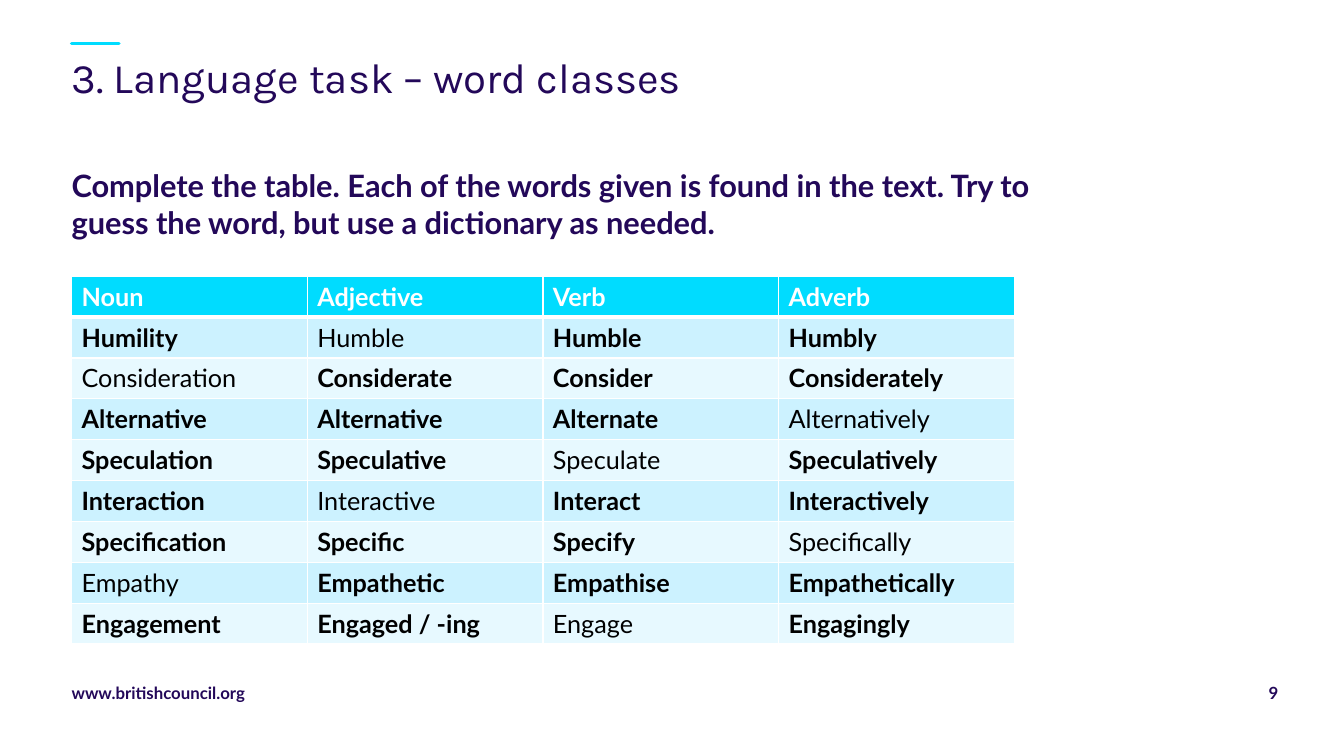
from lxml.etree import SubElement
from pptx import Presentation
from pptx.dml.color import RGBColor
from pptx.enum.shapes import MSO_CONNECTOR
from pptx.enum.text import MSO_ANCHOR, PP_ALIGN
from pptx.oxml import parse_xml
from pptx.oxml.ns import nsdecls, qn
from pptx.util import Inches, Pt

HUES = {"ink": "230859", "cyan": "00DCFF", "white": "FFFFFF",
        "black": "000000", "band": "CCF2FF", "pale": "E7F9FF"}
LEFT, RIGHT = 0.71, 12.68
FOOT = 6.77


def style(para, size, hue, bold=False, face="Lato"):
    font = para.font
    font.name, font.size, font.bold = face, Pt(size), bold
    font.color.rgb = RGBColor.from_string(HUES[hue])


def write(text, left, top, width, height, size, bold=True, face="Lato",
          anchor=MSO_ANCHOR.TOP):
    box = slide.shapes.add_textbox(*map(Inches, (left, top, width, height)))
    frame = box.text_frame
    frame.word_wrap = True
    frame.vertical_anchor = anchor
    frame.margin_left = frame.margin_right = 0
    frame.margin_top = frame.margin_bottom = 0
    para = frame.paragraphs[0]
    para.text = text
    style(para, size, "ink", bold, face)
    return para


deck = Presentation()
deck.slide_width, deck.slide_height = Inches(13.33), Inches(7.5)
slide = deck.slides.add_slide(deck.slide_layouts[6])

# Accent line above the title
rule = slide.shapes.add_connector(
    MSO_CONNECTOR.STRAIGHT, *map(Inches, (LEFT, 0.43, 1.18, 0.43)))
rule.line.color.rgb = RGBColor.from_string(HUES["cyan"])
rule.line.width = Pt(2.4)
rule.line._get_or_add_ln().set("cap", "rnd")
SubElement(rule._element.spPr, qn("a:effectLst"))

# Title and task
title = write("3. Language task – word classes", LEFT, 0.55, RIGHT - LEFT, 0.87,
              30, bold=False, face="Karla")
title.line_spacing = Pt(33)
write("Complete the table. Each of the words given is found in the text. "
      "Try to guess the word, but use a dictionary as needed.",
      LEFT, 1.65, 10.09, 0.8, 22)

# Word classes, each row with the column of its given word
heads = ["Noun", "Adjective", "Verb", "Adverb"]
words = [
    (["Humility", "Humble", "Humble", "Humbly"], 1),
    (["Consideration", "Considerate", "Consider", "Considerately"], 0),
    (["Alternative", "Alternative", "Alternate", "Alternatively"], 3),
    (["Speculation", "Speculative", "Speculate", "Speculatively"], 2),
    (["Interaction", "Interactive", "Interact", "Interactively"], 1),
    (["Specification", "Specific", "Specify", "Specifically"], 3),
    (["Empathy", "Empathetic", "Empathise", "Empathetically"], 0),
    (["Engagement", "Engaged / -ing", "Engage", "Engagingly"], 2),
]
rows = [(heads, None)] + words
table = slide.shapes.add_table(
    len(rows), len(heads), *map(Inches, (LEFT, 2.74, 9.35, 3.65))).table

for r, (row, given) in enumerate(rows):
    fill = "cyan" if r == 0 else "band" if r % 2 else "pale"
    for c, word in enumerate(row):
        cell = table.cell(r, c)
        props = cell._tc.get_or_add_tcPr()
        for side in "LRTB":
            thick = (r, side) in [(0, "B"), (1, "T")]
            props.append(parse_xml(
                f'<a:ln{side} {nsdecls("a")} w="{Pt(3 if thick else 1)}">'
                f'<a:solidFill><a:srgbClr val="{HUES["white"]}"/></a:solidFill>'
                f'</a:ln{side}>'))
        cell.fill.solid()
        cell.fill.fore_color.rgb = RGBColor.from_string(HUES[fill])
        cell.text = word
        style(cell.text_frame.paragraphs[0], 18,
              "black" if r else "white", c != given)

# Footer
write("www.britishcouncil.org", LEFT, FOOT, 7.52, 0.2, 12,
      anchor=MSO_ANCHOR.BOTTOM)
page = write("9", RIGHT - 0.55, FOOT, 0.55, 0.2, 12, anchor=MSO_ANCHOR.BOTTOM)
page.alignment = PP_ALIGN.RIGHT

deck.save("out.pptx")
